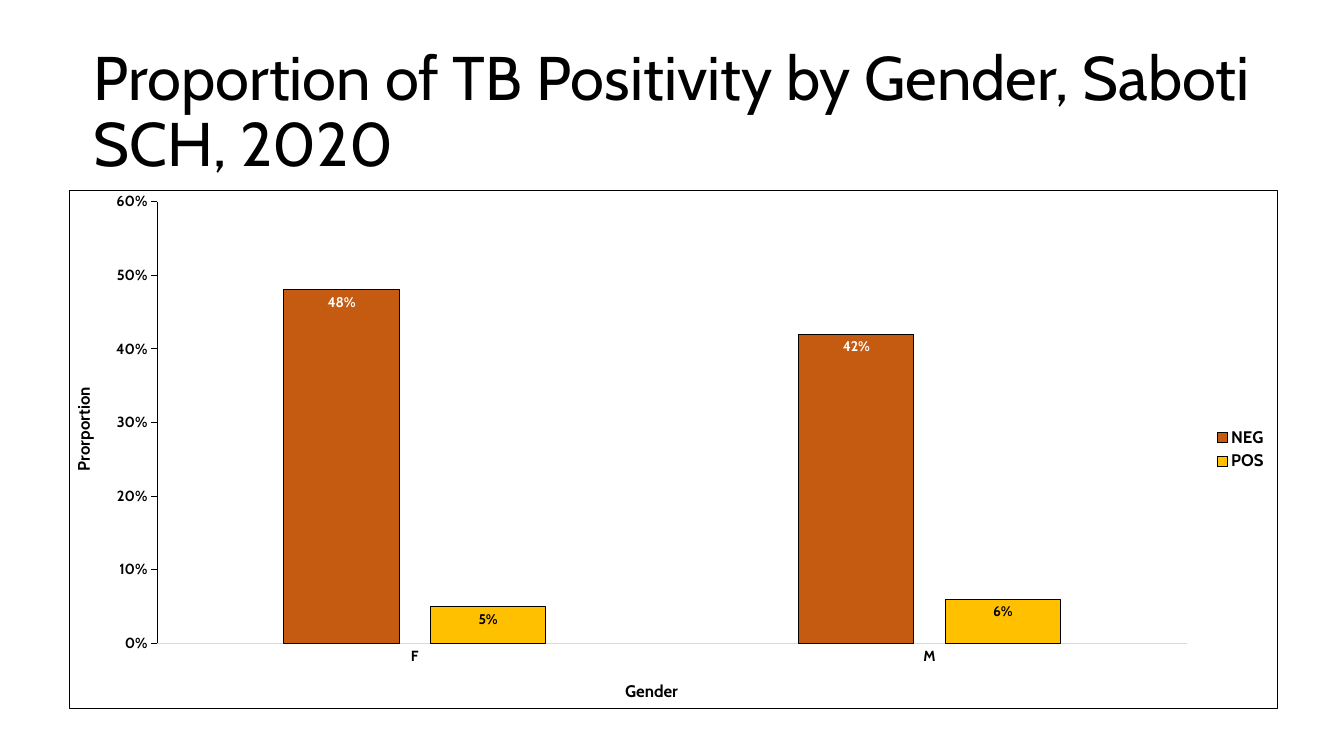
"""Build a slide with a clustered column chart of TB positivity by gender."""
from pptx import Presentation
from pptx.chart.data import CategoryChartData
from pptx.dml.color import RGBColor
from pptx.enum.chart import XL_CHART_TYPE, XL_LABEL_POSITION, XL_LEGEND_POSITION, XL_TICK_MARK
from pptx.enum.text import MSO_ANCHOR
from pptx.oxml import parse_xml
from pptx.oxml.ns import nsdecls
from pptx.util import Cm, Pt

TITLE = "Proportion of TB Positivity by Gender, Saboti SCH, 2020"
TITLE_BOX = (2.11, 1.02, 31.12, 3.68)
CHART_BOX = (1.73, 4.78, 30.48, 13.08)
PLOT_AREA = {"x": 0.073, "y": 0.022, "w": 0.852, "h": 0.853}
GENDERS = ["F", "M"]
SERIES = [
    ("NEG", [0.48, 0.42], "C55A11", "FFFFFF"),
    ("POS", [0.05, 0.06], "FFC000", "000000"),
]
BLACK, GREY = "000000", "D9D9D9"
FONT = "Cabin"


def rgb(code):
    return RGBColor.from_string(code)


def set_attrs(obj, values):
    for name, value in values.items():
        setattr(obj, name, value)


def set_font(font, size, bold=False, color=BLACK):
    set_attrs(font, {"name": FONT, "size": Pt(size), "bold": bold})
    font.color.rgb = rgb(color)


def set_line(line, color):
    line.width = Pt(0.75)
    line.color.rgb = rgb(color)


def add_title(s):
    tf = s.shapes.add_textbox(*map(Cm, TITLE_BOX)).text_frame
    set_attrs(tf, {"word_wrap": True, "vertical_anchor": MSO_ANCHOR.MIDDLE})
    p = tf.paragraphs[0]
    p.line_spacing = 0.9
    r = p.add_run()
    r.text = TITLE
    set_font(r.font, 44)


def format_axis(axis, title, tick, color, rotation):
    set_attrs(axis, {"has_major_gridlines": False, "major_tick_mark": tick,
                     "minor_tick_mark": XL_TICK_MARK.NONE})
    set_font(axis.tick_labels.font, 10.5, True)
    set_line(axis.format.line, color)
    tf = axis.axis_title.text_frame
    r = tf.paragraphs[0].add_run()
    r.text = title
    set_font(r.font, 12, True)
    for body in axis.axis_title.element.xpath(".//a:bodyPr"):
        body.set("rot", str(rotation * 60000))
        body.set("vert", "horz")


def place_plot(chart):
    area = chart.element.xpath("c:chart/c:plotArea")[0]
    for old in area.xpath("c:layout"):
        area.remove(old)
    modes = '<c:xMode val="edge"/><c:yMode val="edge"/>'
    sizes = "".join(f'<c:{k} val="{v}"/>' for k, v in PLOT_AREA.items())
    area.insert(0, parse_xml(
        f'<c:layout {nsdecls("c")}><c:manualLayout><c:layoutTarget val="inner"/>'
        f"{modes}{sizes}</c:manualLayout></c:layout>"))


def add_border(chart):
    chart.element.xpath("c:chart")[0].addnext(parse_xml(
        f'<c:spPr {nsdecls("c", "a")}><a:noFill/><a:ln w="{Pt(0.75)}"><a:solidFill>'
        f'<a:srgbClr val="{BLACK}"/></a:solidFill></a:ln></c:spPr>'))


def add_chart(s):
    data = CategoryChartData(number_format="0%")
    data.categories = GENDERS
    for name, values, *_ in SERIES:
        data.add_series(name, values)
    chart = s.shapes.add_chart(
        XL_CHART_TYPE.COLUMN_CLUSTERED, *map(Cm, CHART_BOX), data).chart
    set_font(chart.font, 10)
    set_attrs(chart, {"has_title": False, "has_legend": True})
    set_attrs(chart.legend, {"position": XL_LEGEND_POSITION.RIGHT, "include_in_layout": False})
    set_font(chart.legend.font, 12, True)

    plot = chart.plots[0]
    set_attrs(plot, {"gap_width": 219, "overlap": -27, "vary_by_categories": False})
    for series, (_, _, fill, label_color) in zip(plot.series, SERIES):
        series.format.fill.solid()
        series.format.fill.fore_color.rgb = rgb(fill)
        set_line(series.format.line, BLACK)
        labels = series.data_labels
        set_attrs(labels, {"show_value": True, "position": XL_LABEL_POSITION.INSIDE_END,
                           "number_format": "0%", "number_format_is_linked": False})
        set_font(labels.font, 10, True, label_color)

    format_axis(chart.category_axis, "Gender", XL_TICK_MARK.NONE, GREY, 0)
    format_axis(chart.value_axis, "Prorportion", XL_TICK_MARK.OUTSIDE, BLACK, -90)
    set_attrs(chart.value_axis, {"minimum_scale": 0, "maximum_scale": 0.6, "major_unit": 0.1})
    set_attrs(chart.value_axis.tick_labels,
              {"number_format": "0%", "number_format_is_linked": False})
    place_plot(chart)
    add_border(chart)


def main():
    prs = Presentation()
    set_attrs(prs, {"slide_width": Cm(33.87), "slide_height": Cm(19.05)})
    s = prs.slides.add_slide(prs.slide_layouts[6])
    add_title(s)
    add_chart(s)
    prs.save("out.pptx")


if __name__ == "__main__":
    main()
